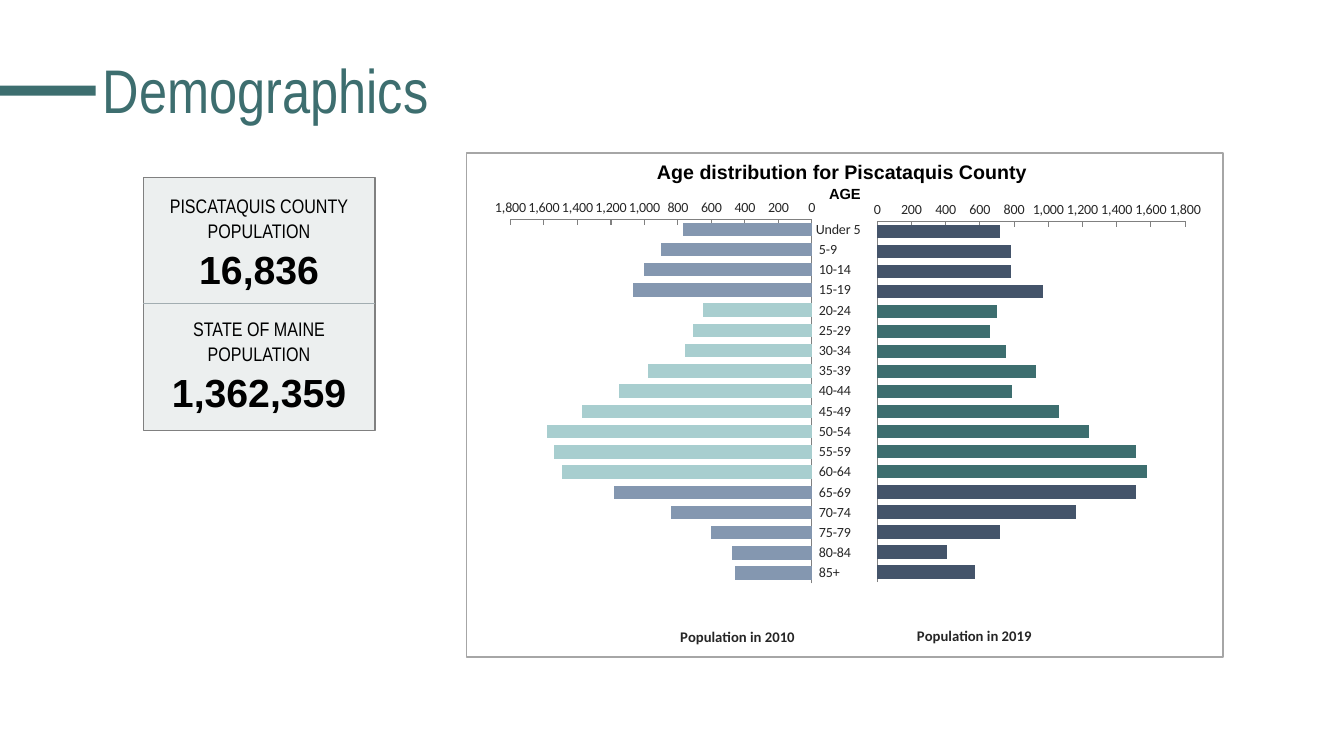
import lxml.etree
import pptx
import pptx.chart.data
import pptx.dml.color
import pptx.enum.chart
import pptx.enum.shapes
import pptx.enum.text
import pptx.oxml
import pptx.oxml.ns
import pptx.util

Inches, Pt, qn = pptx.util.Inches, pptx.util.Pt, pptx.oxml.ns.qn
CENTER = pptx.enum.text.PP_ALIGN.CENTER
TEAL, INK, AXIS_GREY, BLACK = "3D6E6F", "262626", "808080", "000000"
AGES = ["Under 5"] + [f" {age}-{age + 4}" for age in range(5, 85, 5)] + [" 85+"]
WORKING_AGES = range(4, 13)
POPULATION_2010 = [770, 900, 1000, 1070, 650, 710, 760, 980, 1150,
                   1370, 1580, 1540, 1490, 1180, 840, 600, 480, 460]
POPULATION_2019 = [720, 780, 780, 970, 700, 660, 750, 930, 790,
                   1060, 1240, 1510, 1580, 1510, 1160, 720, 410, 570]


def color(hex_string):
    """Return the colour for a hex string."""
    return pptx.dml.color.RGBColor.from_string(hex_string)


def style_font(font, name, size, hex_string, bold=False):
    """Set the face, size, colour and weight of a font."""
    font.name, font.size, font.bold = name, Pt(size), bold
    font.color.rgb = color(hex_string)


def style_line(line, hex_string, width):
    """Set the colour and width of a line."""
    line.color.rgb = color(hex_string)
    line.width = Pt(width)


def add_panel(slide, box, fill=None, outline=None):
    """Add a rectangle with optional fill and (colour, width) outline."""
    panel = slide.shapes.add_shape(
        pptx.enum.shapes.MSO_SHAPE.RECTANGLE, *map(Inches, box))
    panel.shadow.inherit = False
    if fill:
        panel.fill.solid()
        panel.fill.fore_color.rgb = color(fill)
    else:
        panel.fill.background()
    if outline:
        style_line(panel.line, *outline)
    else:
        panel.line.fill.background()
    return panel


def write_lines(frame, lines):
    """Fill a frame with centred (text, font, size, bold, space after) lines."""
    frame.word_wrap = True
    for index, (text, name, size, bold, after) in enumerate(lines):
        paragraph = frame.add_paragraph() if index else frame.paragraphs[0]
        paragraph.text = text
        paragraph.alignment = CENTER
        paragraph.line_spacing = 1.07
        paragraph.space_after = Pt(after)
        style_font(paragraph.font, name, size, BLACK, bold)


def add_heading(slide, box):
    """Format the slide title and put the accent bar to its left."""
    left, top, width, height = box
    add_panel(slide, (0, top + 0.65, left + 0.03, 0.1), TEAL)
    title = slide.shapes.title
    title.left, title.top, title.width, title.height = map(Inches, box)
    title.text_frame.text = "Demographics"
    title.text_frame.vertical_anchor = pptx.enum.text.MSO_ANCHOR.MIDDLE
    paragraph = title.text_frame.paragraphs[0]
    paragraph.alignment = pptx.enum.text.PP_ALIGN.LEFT
    paragraph.line_spacing = 0.9
    style_font(paragraph.font, "Arial Narrow", 44, TEAL)


def add_population_card(slide, box):
    """Add the county and state totals with a rule between them."""
    left, top, width, height = box
    frame = add_panel(slide, box, "ECEFEF", (AXIS_GREY, 0.75)).text_frame
    frame.margin_left = frame.margin_right = 0
    frame.margin_top = frame.margin_bottom = 0
    frame.vertical_anchor = pptx.enum.text.MSO_ANCHOR.MIDDLE
    lines = []
    for place, total, after in (("PISCATAQUIS COUNTY", "16,836", 16),
                                ("STATE OF MAINE", "1,362,359", 0)):
        lines += [(place, "Arial Narrow", 14, False, 0),
                  ("POPULATION", "Arial Narrow", 14, False, 0),
                  (total, "Arial", 28, True, after)]
    write_lines(frame, lines)
    middle = top + height / 2 - 0.01
    rule = slide.shapes.add_connector(
        pptx.enum.shapes.MSO_CONNECTOR.STRAIGHT,
        *map(Inches, (left, middle, left + width, middle)))
    style_line(rule.line, "A2ADB1", 0.5)
    lxml.etree.SubElement(rule._element.spPr, qn("a:effectLst"))


def set_layout(parent, index, x, y, size=None):
    """Place a plot area or axis title by fractions of its chart."""
    for old in parent.findall(qn("c:layout")):
        parent.remove(old)
    layout = pptx.oxml.parse_xml(
        f"<c:layout {pptx.oxml.ns.nsdecls('c')}><c:manualLayout/></c:layout>")
    settings = [("xMode", "edge"), ("yMode", "edge"), ("x", x), ("y", y)]
    if size:
        settings = [("layoutTarget", "inner"), *settings,
                    ("w", size[0]), ("h", size[1])]
    for tag, value in settings:
        lxml.etree.SubElement(layout[0], qn(f"c:{tag}")).set("val", str(value))
    parent.insert(index, layout)


def add_age_chart(slide, box, year, population, colors, plot, caption, left_side):
    """Add one side of the population pyramid."""
    kinds = pptx.enum.chart
    data = pptx.chart.data.CategoryChartData(number_format="#,##0")
    data.categories = AGES
    data.add_series(f"Population in {year}", population)
    chart = slide.shapes.add_chart(
        kinds.XL_CHART_TYPE.BAR_CLUSTERED, *map(Inches, box), data).chart
    chart.has_legend = chart.has_title = False
    style_font(chart.font, "Calibri", 10, BLACK)
    chart._chartSpace.find(qn("c:chart")).addnext(pptx.oxml.parse_xml(
        f"<c:spPr {pptx.oxml.ns.nsdecls('c', 'a')}><a:noFill/>"
        "<a:ln><a:noFill/></a:ln></c:spPr>"))
    set_layout(chart._chartSpace.find(".//" + qn("c:plotArea")), 0,
               *plot[:2], plot[2:])

    bars = chart.plots[0]
    bars.gap_width = 50
    bars.vary_by_categories = False
    other_color, working_color = colors
    series = bars.series[0]
    series.format.fill.solid()
    series.format.fill.fore_color.rgb = color(other_color)
    for index in WORKING_AGES:
        fill = series.points[index].format.fill
        fill.solid()
        fill.fore_color.rgb = color(working_color)

    ages, people = chart.category_axis, chart.value_axis
    for axis, tick in ((ages, kinds.XL_TICK_MARK.NONE),
                       (people, kinds.XL_TICK_MARK.INSIDE)):
        axis.has_major_gridlines = False
        axis.major_tick_mark = tick
        axis.minor_tick_mark = kinds.XL_TICK_MARK.NONE
        style_line(axis.format.line, AXIS_GREY, 0.75)
        style_font(axis.tick_labels.font, "Calibri", 10, INK)
    ages.reverse_order = True
    ages.crosses_at = len(AGES) + 1
    if not left_side:
        ages.tick_label_position = kinds.XL_TICK_LABEL_POSITION.NONE
    people.reverse_order = left_side
    people.minimum_scale, people.maximum_scale = 0, 1800
    people.major_unit = 200
    people.tick_labels.number_format = "#,##0"
    people.tick_labels.number_format_is_linked = False
    people.axis_title.text_frame.text = f"Population in {year}"
    style_font(people.axis_title.text_frame.paragraphs[0].font,
               "Calibri", 10.5, INK, True)
    set_layout(people.axis_title._element, 1, *caption)


def add_age_pyramid(slide, box):
    """Add the framed age distribution with its two charts."""
    left, top, width, height = box
    frame = add_panel(slide, box, outline=("A6A6A6", 1)).text_frame
    frame.vertical_anchor = pptx.enum.text.MSO_ANCHOR.TOP
    frame.margin_top = Inches(0.05)
    write_lines(frame, [
        ("Age distribution for Piscataquis County ", "Arial", 14, True, 0),
        ("AGE", "Arial", 10.5, True, 0)])
    add_age_chart(slide, (left + 3.85, top + 0.45, 3.68, 4.53), 2019,
                  POPULATION_2019, ("44546A", TEAL),
                  (0.06, 0.05, 0.83, 0.79), (0.16, 0.93), False)
    add_age_chart(slide, (left + 0.07, top + 0.46, 4.04, 4.53), 2010,
                  POPULATION_2010, ("8497B0", "A8CECF"),
                  (0.09, 0.04, 0.74, 0.8), (0.5, 0.93), True)


def main():
    """Build the demographics slide."""
    deck = pptx.Presentation()
    deck.slide_width, deck.slide_height = Inches(13.33), Inches(7.5)
    slide = deck.slides.add_slide(deck.slide_layouts[5])
    add_heading(slide, (0.92, 0.2, 11.5, 1.45))
    add_population_card(slide, (1.42, 1.76, 2.3, 2.51))
    add_age_pyramid(slide, (4.63, 1.52, 7.5, 5))
    deck.save("out.pptx")


if __name__ == "__main__":
    main()
